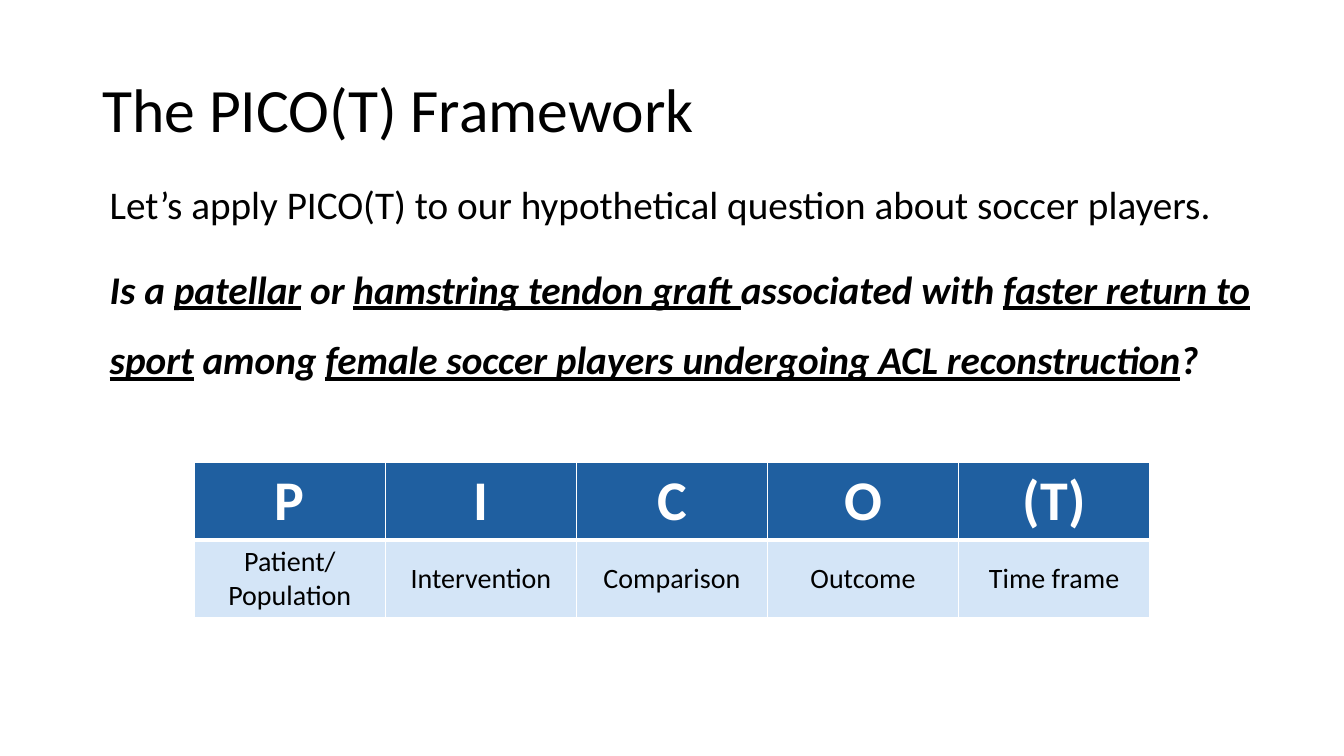
from lxml.etree import SubElement
from pptx import Presentation
from pptx.dml.color import RGBColor
from pptx.enum.text import MSO_ANCHOR as ANCHOR, PP_ALIGN as ALIGN
from pptx.oxml.ns import qn
from pptx.util import Pt

BLACK, WHITE, NAVY, PALE = "000000", "FFFFFF", "1F5FA0", "D4E5F7"


def px(n):
    return n * 9525


def color(value):
    return RGBColor.from_string(value)


class Deck:
    font = "Calibri"

    def __init__(self, width, height):
        self.prs = Presentation()
        self.prs.slide_width, self.prs.slide_height = px(width), px(height)
        self.s = self.prs.slides.add_slide(self.prs.slide_layouts[6])

    def run(self, p, text, size, fill=BLACK, bold=False, italic=False, underline=False):
        r = p.add_run()
        r.text = text
        f = r.font
        f.name, f.size, f.color.rgb = self.font, Pt(size), color(fill)
        f.bold, f.italic, f.underline = bold, italic, underline

    def text_box(self, x, y, w, h, anchor=ANCHOR.TOP):
        tf = self.s.shapes.add_textbox(px(x), px(y), px(w), px(h)).text_frame
        tf.word_wrap, tf.vertical_anchor = True, anchor
        return tf

    def border(self, cell, **widths):
        # Edges must come in the order L, R, T, B
        for edge, width in widths.items():
            ln = SubElement(cell._tc.get_or_add_tcPr(), qn(f"a:ln{edge}"), w=str(Pt(width)))
            SubElement(SubElement(ln, qn("a:solidFill")), qn("a:srgbClr"), val=WHITE)

    def cell(self, cell, text, size, ink, fill, bold, top, bottom):
        self.border(cell, L=1, R=1, T=top, B=bottom)
        cell.fill.solid()
        cell.fill.fore_color.rgb = color(fill)
        cell.vertical_anchor = ANCHOR.MIDDLE
        p = cell.text_frame.paragraphs[0]
        p.alignment = ALIGN.CENTER
        self.run(p, text, size, ink, bold)

    def table(self, x, y, col_w, row_h, columns):
        shape = self.s.shapes.add_table(2, len(columns), px(x), px(y),
                                        px(col_w * len(columns)), px(row_h * 2))
        table = shape.table
        for row in table.rows:
            row.height = px(row_h)
        for i, (letter, meaning) in enumerate(columns):
            table.columns[i].width = px(col_w)
            self.cell(table.cell(0, i), letter, 40, WHITE, NAVY, True, 1, 3)
            self.cell(table.cell(1, i), meaning, 20, BLACK, PALE, False, 3, 1)


def main():
    deck = Deck(1280, 720)

    # Title
    p = deck.text_box(88, 38, 1104, 139, ANCHOR.MIDDLE).paragraphs[0]
    p.line_spacing = 0.9
    deck.run(p, "The PICO(T) Framework", 44)

    # Introduction and question, with the PICO(T) terms underlined
    tf = deck.text_box(95, 167, 1151, 457)
    deck.run(tf.paragraphs[0],
             "Let’s apply PICO(T) to our hypothetical question about soccer players.", 28)
    p = tf.add_paragraph()
    p.line_spacing, p.space_before = 1.5, Pt(10)
    question = ["Is a ", "patellar", " or ", "hamstring tendon graft ", "associated with ",
                "faster return to sport", " among ",
                "female soccer players undergoing ACL reconstruction", "?"]
    for i, part in enumerate(question):
        deck.run(p, part, 28, bold=True, italic=True, underline=i % 2 == 1)

    # PICO(T) table
    deck.table(185, 440, 182, 74, [
        ("P", "Patient/ Population"),
        ("I", "Intervention"),
        ("C", "Comparison"),
        ("O", "Outcome"),
        ("(T)", "Time frame"),
    ])

    deck.prs.save("out.pptx")


if __name__ == "__main__":
    main()
